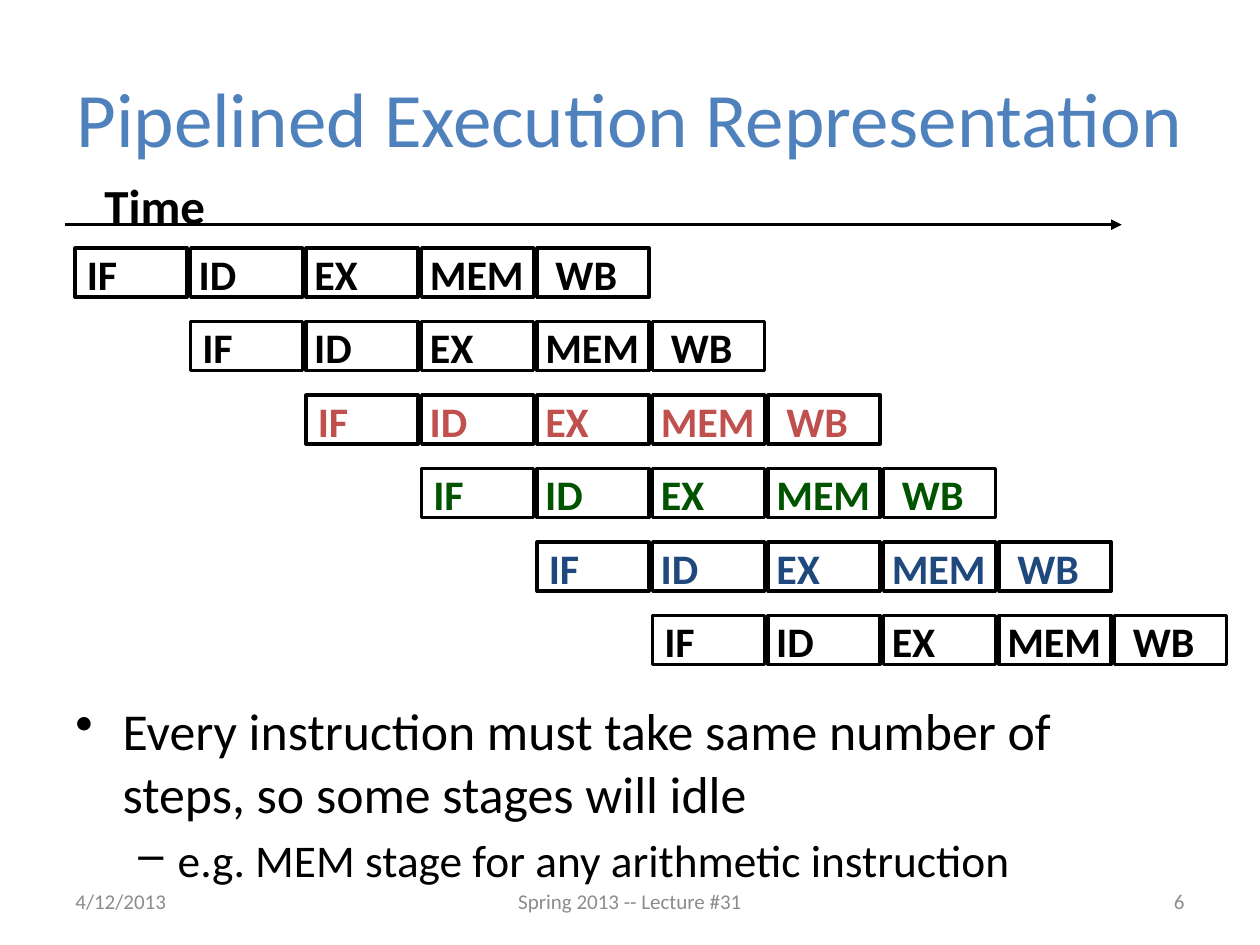
from dataclasses import dataclass
from typing import Any

import lxml.etree
import pptx
import pptx.enum.shapes
import pptx.enum.text
import pptx.oxml.ns
import pptx.util

Pt = pptx.util.Pt
Align = pptx.enum.text.PP_ALIGN
Anchor = pptx.enum.text.MSO_ANCHOR

COLOURS = {
    "title": "4F81BD",
    "black": "000000",
    "red": "C0504D",
    "green": "005400",
    "blue": "1F497D",
    "grey": "8C8C8C",
}
STEP, ROW_PITCH = 66, 42
GRID_LEFT, GRID_TOP = 43, 141.8
STAGE_WIDTH, STAGE_HEIGHT = 64, 28


@dataclass(frozen=True)
class Stage:
    name: str
    shift: float
    width: float


@dataclass(frozen=True)
class Bullet:
    text: str
    mark: str
    size: float
    margin: float
    hang: float
    level: int


@dataclass(frozen=True)
class Footer:
    text: str
    left: float
    width: float
    align: Any


STAGES = [
    Stage("IF", -0.5, 32),
    Stage("ID", -2.5, 36),
    Stage("EX", -2.5, 40),
    Stage("MEM", -2.5, 68),
    Stage("WB", 3.3, 54),
]
INSTRUCTIONS = ["black", "black", "red", "green", "blue", "black"]
BULLETS = [
    Bullet("Every instruction must take same number of steps, so some stages will idle",
           "•", 29.6, 27, 27, 0),
    Bullet("e.g. MEM stage for any arithmetic instruction", "–", 25.9, 58.5, 22.5, 1),
]
FOOTERS = [
    Footer("4/12/2013", 36, 168, Align.LEFT),
    Footer("6", 516, 168, Align.RIGHT),
    Footer("Spring 2013 -- Lecture #31", 246, 228, Align.CENTER),
]


def rgb(name: str) -> pptx.dml.color.RGBColor:
    return pptx.dml.color.RGBColor.from_string(COLOURS[name])


def add_frame(shapes: Any, left: float, top: float, width: float, height: float,
              wrap: bool = True, anchor: Any = Anchor.TOP) -> Any:
    box = shapes.add_textbox(Pt(left), Pt(top), Pt(width), Pt(height))
    box.text_frame.word_wrap = wrap
    box.text_frame.vertical_anchor = anchor
    return box.text_frame


def write(para: Any, text: str, *, size: float, colour: str = "black",
          bold: bool = False, align: Any = Align.LEFT) -> None:
    para.alignment = align
    span = para.add_run()
    span.text = text
    span.font.name = "Calibri"
    span.font.size = Pt(size)
    span.font.bold = bold
    span.font.color.rgb = rgb(colour)


def add_bullet(para: Any, bullet: Bullet) -> None:
    para.level = bullet.level
    para.space_before = Pt(round(bullet.size * 0.2, 1))
    write(para, bullet.text, size=bullet.size)
    properties = para._p.get_or_add_pPr()
    properties.set("marL", str(Pt(bullet.margin)))
    properties.set("indent", str(-Pt(bullet.hang)))
    mark = lxml.etree.SubElement(properties, pptx.oxml.ns.qn("a:buChar"))
    mark.set("char", bullet.mark)


def add_instruction(page: Any, row: int, colour: str) -> None:
    shapes = page.shapes.add_group_shape().shapes
    top = GRID_TOP + row * ROW_PITCH
    for column, stage in enumerate(STAGES, start=row):
        left = GRID_LEFT + column * STEP
        box = shapes.add_shape(pptx.enum.shapes.MSO_SHAPE.RECTANGLE, Pt(left), Pt(top),
                               Pt(STAGE_WIDTH), Pt(STAGE_HEIGHT))
        box.shadow.inherit = False
        box.fill.background()
        box.line.color.rgb = rgb("black")
        box.line.width = Pt(2)
        frame = add_frame(shapes, left + stage.shift, top - 3.4, stage.width, 36, wrap=False)
        write(frame.paragraphs[0], stage.name, size=24, colour=colour, bold=True)


def add_time_axis(page: Any) -> None:
    shapes = page.shapes.add_group_shape().shapes
    arrow = shapes.add_connector(pptx.enum.shapes.MSO_CONNECTOR.STRAIGHT,
                                 Pt(37), Pt(128.4), Pt(641), Pt(128.4))
    arrow.line.color.rgb = rgb("black")
    arrow.line.width = Pt(2)
    head = lxml.etree.SubElement(arrow.line._get_or_add_ln(), pptx.oxml.ns.qn("a:tailEnd"))
    head.set("type", "triangle")
    lxml.etree.SubElement(arrow._element.spPr, pptx.oxml.ns.qn("a:effectLst"))
    frame = add_frame(shapes, 52.6, 96.5, 80, 40, wrap=False)
    write(frame.paragraphs[0], "Time", size=28, bold=True)


def main() -> None:
    deck = pptx.Presentation()
    deck.slide_width, deck.slide_height = Pt(720), Pt(540)
    page = deck.slides.add_slide(deck.slide_layouts[6])

    title = add_frame(page.shapes, 36, 21.6, 648, 90, anchor=Anchor.MIDDLE)
    write(title.paragraphs[0], "Pipelined Execution Representation",
          size=44, colour="title", align=Align.CENTER)

    body = add_frame(page.shapes, 36, 396, 648, 109.4)
    for index, bullet in enumerate(BULLETS):
        add_bullet(body.add_paragraph() if index else body.paragraphs[0], bullet)

    for row, colour in enumerate(INSTRUCTIONS):
        add_instruction(page, row, colour)
    add_time_axis(page)

    for footer in FOOTERS:
        frame = add_frame(page.shapes, footer.left, 500.5, footer.width, 28.8,
                          anchor=Anchor.MIDDLE)
        write(frame.paragraphs[0], footer.text, size=12, colour="grey", align=footer.align)

    deck.save("out.pptx")


if __name__ == "__main__":
    main()
